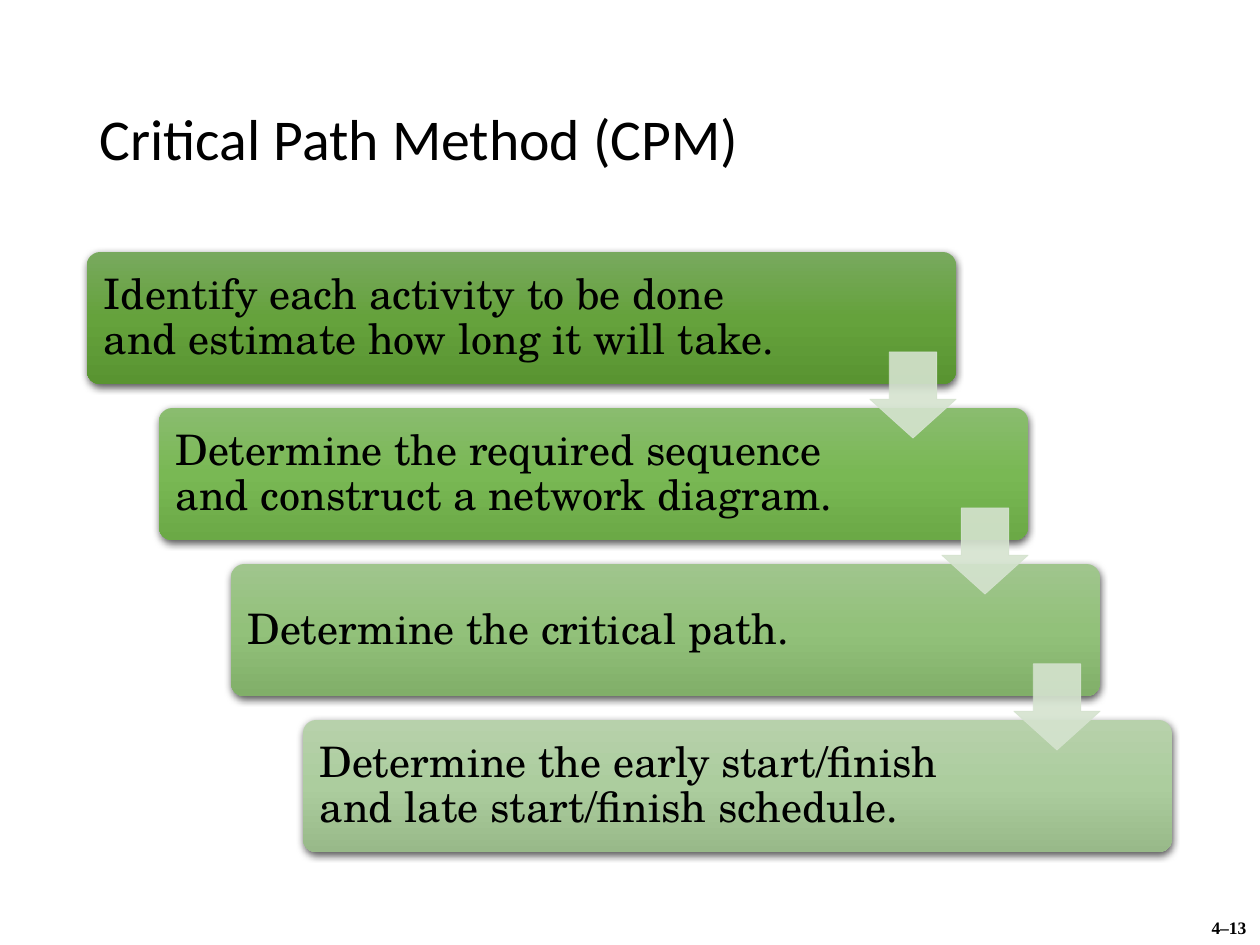
from copy import deepcopy
from lxml.etree import SubElement
from pptx import Presentation
from pptx.dml.color import RGBColor
from pptx.enum.shapes import MSO_SHAPE
from pptx.enum.text import MSO_ANCHOR, MSO_AUTO_SIZE, PP_ALIGN
from pptx.oxml import parse_xml
from pptx.oxml.ns import nsdecls, qn
from pptx.util import Emu, Pt

COLORS = {"text": "000000", "arrow": "D5E3CF", "background": "FFFFFF"}
STEPS = [
    ("Identify each activity to be done and estimate how long it will take.",
     ("78A95E", "65A23C", "599431")),
    ("Determine the required sequence and construct a network diagram.",
     ("8ABC6F", "79B854", "6BA946")),
    ("Determine the critical path.",
     ("A0C58D", "92C17A", "81AF69")),
    ("Determine the early start/finish and late start/finish schedule.",
     ("B7D1AB", "ACCD9E", "98B989")),
]
STEP_X, STEP_Y = 72, 156
SHADOW = (
    f'<a:effectLst {nsdecls("a")}>'
    '<a:outerShdw blurRad="57150" dist="19050" dir="5400000" algn="ctr" rotWithShape="0">'
    '<a:srgbClr val="000000"><a:alpha val="63000"/></a:srgbClr>'
    '</a:outerShdw></a:effectLst>'
)


def px(*lengths):
    return [Emu(round(length * 914400 / 126)) for length in lengths]


def write(box, text, font, size, spacing=1.0, align=PP_ALIGN.LEFT, bold=False):
    frame = box.text_frame
    frame.text = text
    para = frame.paragraphs[0]
    para.alignment = align
    para.line_spacing = spacing
    span = para.runs[0]
    span.font.name = font
    span.font.size = Pt(size)
    span.font.bold = bold
    span.font.color.rgb = RGBColor.from_string(COLORS["text"])
    return frame


deck = Presentation()
deck.slide_width, deck.slide_height = px(1260, 945)
page = deck.slides.add_slide(deck.slide_layouts[5])
page.background.fill.solid()
page.background.fill.fore_color.rgb = RGBColor.from_string(COLORS["background"])

number = page.shapes.add_textbox(*px(1197, 911, 64, 34))
frame = write(number, "4–13", "Times New Roman", 10, align=PP_ALIGN.CENTER, bold=True)
frame.word_wrap = False

title = page.shapes.title
title.left, title.top, title.width, title.height = px(87, 50, 1086, 183)
frame = write(title, "Critical Path Method (CPM)", "Calibri", 33, 0.9)
frame.auto_size = MSO_AUTO_SIZE.NONE
frame.vertical_anchor = MSO_ANCHOR.MIDDLE

for index, (text, shades) in enumerate(STEPS):
    left, top = 87 + index * STEP_X, 252 + index * STEP_Y
    panel = page.shapes.add_shape(MSO_SHAPE.ROUNDED_RECTANGLE, *px(left, top, 869, 132))
    panel.adjustments[0] = 0.1
    panel.line.fill.background()
    panel.fill.gradient()
    panel.fill.gradient_angle = 270
    stop_list = panel._element.spPr.find(qn("a:gradFill")).find(qn("a:gsLst"))
    stop_list.insert(1, deepcopy(stop_list[0]))
    for stop, shade, position in zip(panel.fill.gradient_stops, shades, (0, 0.5, 1)):
        stop.color.rgb = RGBColor.from_string(shade)
        stop.position = position
    panel._element.spPr.append(parse_xml(SHADOW))

    box = page.shapes.add_textbox(*px(left + 4, top + 4, 704, 125))
    frame = write(box, text, "TeX Gyre Schola", 24, 0.9)
    frame.word_wrap = True
    frame.vertical_anchor = MSO_ANCHOR.MIDDLE
    frame.margin_left, frame.margin_top, frame.margin_right, frame.margin_bottom = px(13, 13, 13, 13)

for index in range(len(STEPS) - 1):
    arrow = page.shapes.add_shape(
        MSO_SHAPE.DOWN_ARROW, *px(870 + index * STEP_X, 352 + index * STEP_Y, 86, 86))
    arrow.adjustments[0] = 0.55
    arrow.adjustments[1] = 0.45
    arrow.shadow.inherit = False
    arrow.line.width = Pt(0.5)
    for paint in (arrow.fill, arrow.line.fill):
        paint.solid()
        paint.fore_color.rgb = RGBColor.from_string(COLORS["arrow"])
    for color in arrow._element.spPr.iter(qn("a:srgbClr")):
        SubElement(color, qn("a:alpha")).set("val", "90000")

deck.save("out.pptx")
